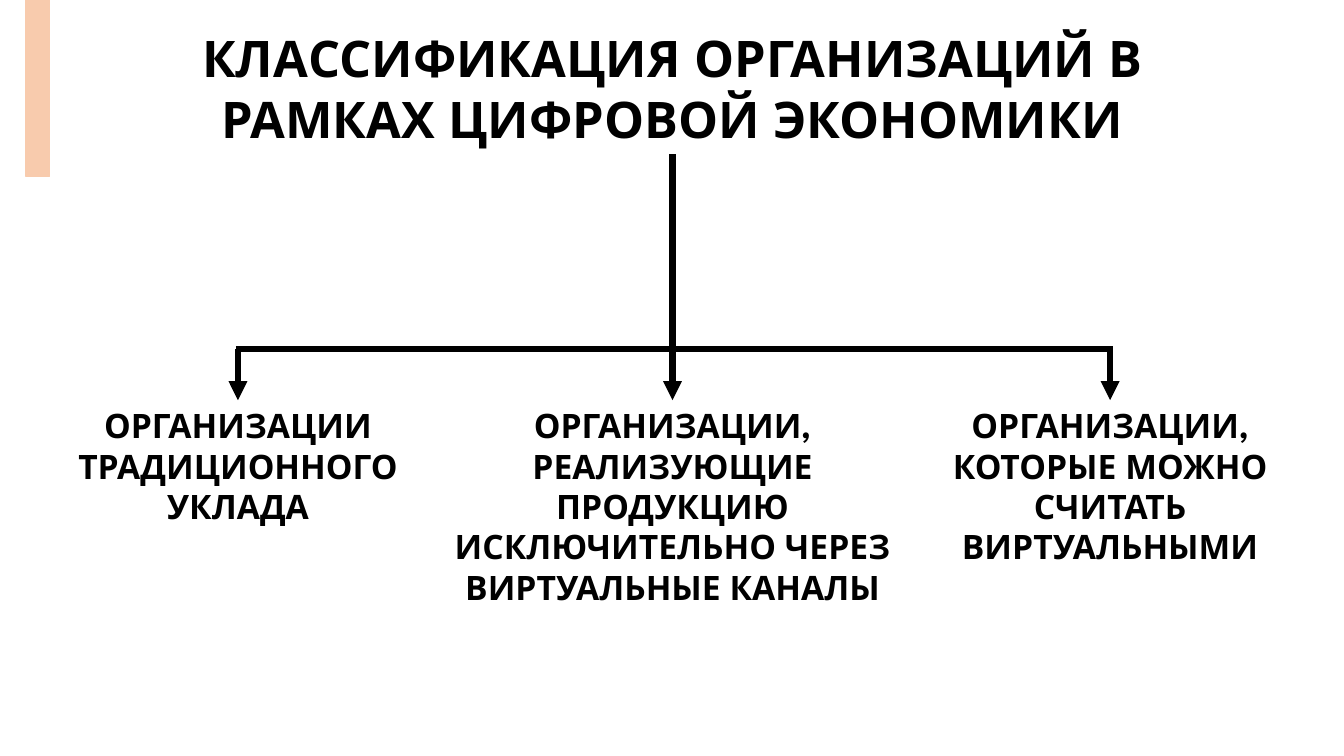
import pptx
import pptx.util
import pptx.dml.color
import pptx.enum.shapes
import pptx.enum.text
import pptx.oxml
import pptx.oxml.ns

INK = {"text": "000000", "line": "000000", "peach": "F8CBAD"}


def px(n):
    return pptx.util.Emu(n * 9144)


def hue(name):
    return pptx.dml.color.RGBColor.from_string(INK[name])


def write(frame, text, size=24, color="text", font="League Spartan", bold=True):
    frame.word_wrap = True
    frame.auto_size = pptx.enum.text.MSO_AUTO_SIZE.SHAPE_TO_FIT_TEXT
    frame.vertical_anchor = pptx.enum.text.MSO_ANCHOR.TOP
    para = frame.paragraphs[0]
    para.alignment = pptx.enum.text.PP_ALIGN.CENTER
    para.line_spacing = 1.0
    run = para.add_run()
    run.text = text
    run.font.size = pptx.util.Pt(size)
    run.font.name = font
    run.font.bold = bold
    run.font.color.rgb = hue(color)


class Board:
    def __init__(self, deck, weight=4.5):
        self.slide = deck.slides.add_slide(deck.slide_layouts[5])
        self.shapes = self.slide.shapes
        self.weight = weight

    def title(self, text, x, y, w, h):
        head = self.shapes.title
        head.left, head.top, head.width, head.height = map(px, (x, y, w, h))
        write(head.text_frame, text, size=36)
        return head

    def label(self, text, x, y, w, h):
        box = self.shapes.add_textbox(*map(px, (x, y, w, h)))
        write(box.text_frame, text)
        return box

    def bar(self, x, y, w, h, color):
        rect = self.shapes.add_shape(
            pptx.enum.shapes.MSO_SHAPE.RECTANGLE, *map(px, (x, y, w, h)))
        rect.shadow.inherit = False
        rect.fill.solid()
        rect.fill.fore_color.rgb = hue(color)
        rect.line.color.rgb = hue(color)
        rect.line.width = pptx.util.Pt(1)

    def line(self, x1, y1, x2, y2, start=None, end=None):
        link = self.shapes.add_connector(
            pptx.enum.shapes.MSO_CONNECTOR.STRAIGHT, *map(px, (x1, y1, x2, y2)))
        link.line.color.rgb = hue("line")
        link.line.width = pptx.util.Pt(self.weight)
        if start is not None:
            link.begin_connect(start, 2)
        if end is not None:
            link.end_connect(end, 0)
            ln = link.line._get_or_add_ln()
            tip = pptx.oxml.parse_xml(
                '<a:tailEnd %s type="triangle"/>' % pptx.oxml.ns.nsdecls("a"))
            ln.append(tip)
        link._element.spPr.append(pptx.oxml.parse_xml(
            "<a:effectLst %s/>" % pptx.oxml.ns.nsdecls("a")))


def main():
    deck = pptx.Presentation()
    deck.slide_width, deck.slide_height = px(1333), px(750)
    board = Board(deck)
    head = board.title(
        "КЛАССИФИКАЦИЯ ОРГАНИЗАЦИЙ В РАМКАХ ЦИФРОВОЙ ЭКОНОМИКИ",
        85, 22, 1164, 131)
    board.bar(26, 0, 23, 175, "peach")

    top, rail = 397, 346
    kinds = [
        ("ОРГАНИЗАЦИИ ТРАДИЦИОННОГО УКЛАДА", 23, 426, 131),
        ("ОРГАНИЗАЦИИ, РЕАЛИЗУЮЩИЕ ПРОДУКЦИЮ ИСКЛЮЧИТЕЛЬНО ЧЕРЕЗ "
         "ВИРТУАЛЬНЫЕ КАНАЛЫ", 418, 498, 212),
        ("ОРГАНИЗАЦИИ, КОТОРЫЕ МОЖНО СЧИТАТЬ ВИРТУАЛЬНЫМИ", 895, 412, 172),
    ]
    boxes = [board.label(text, x, top, w, h) for text, x, w, h in kinds]
    left, mid, right = [x + w // 2 for _, x, w, _ in kinds]

    board.line(mid, 153, mid, top, start=head, end=boxes[1])
    board.line(left - 2, rail, right + 3, rail)
    board.line(left, rail, left, top, end=boxes[0])
    board.line(right, rail, right, top, end=boxes[2])
    deck.save("out.pptx")


if __name__ == "__main__":
    main()
